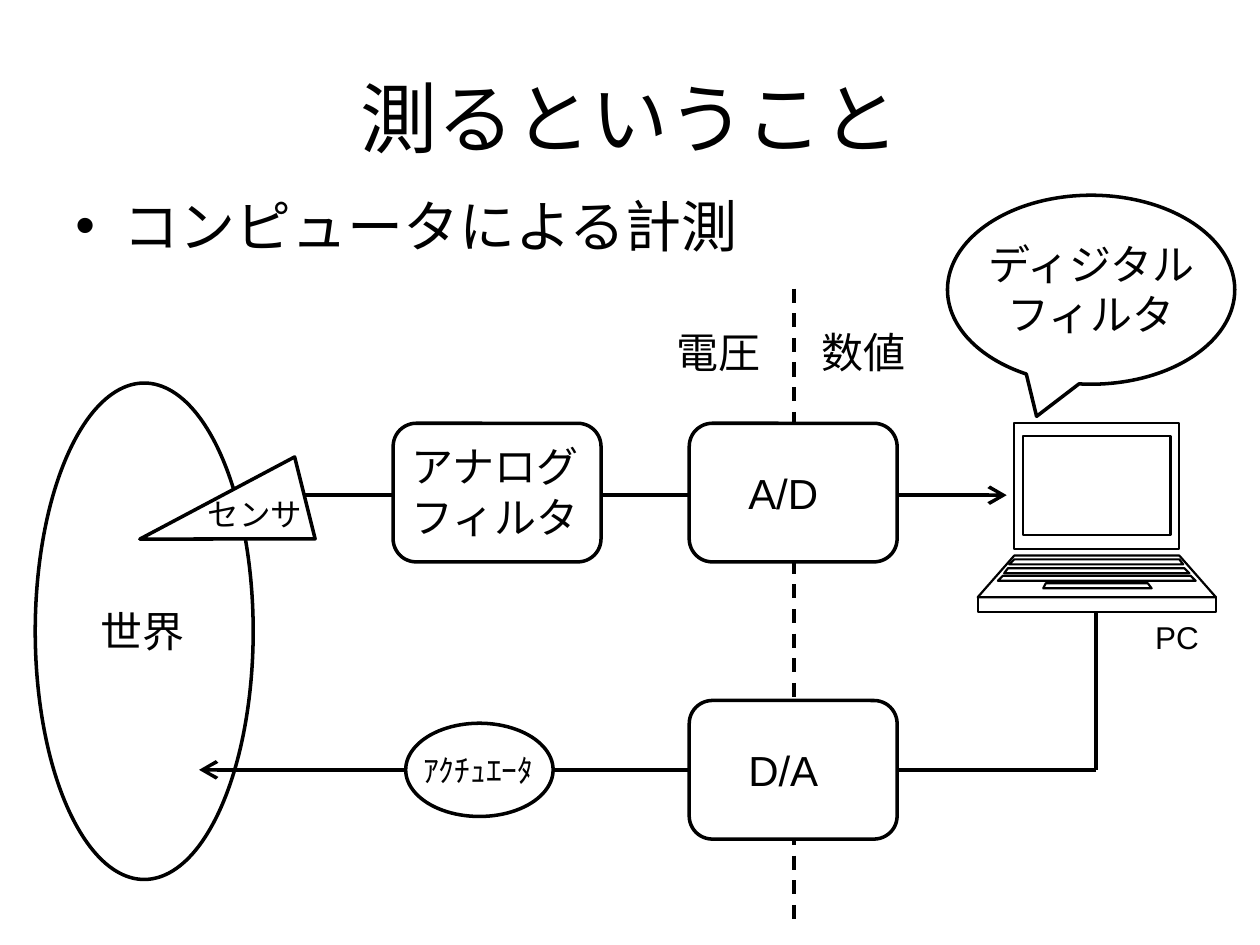
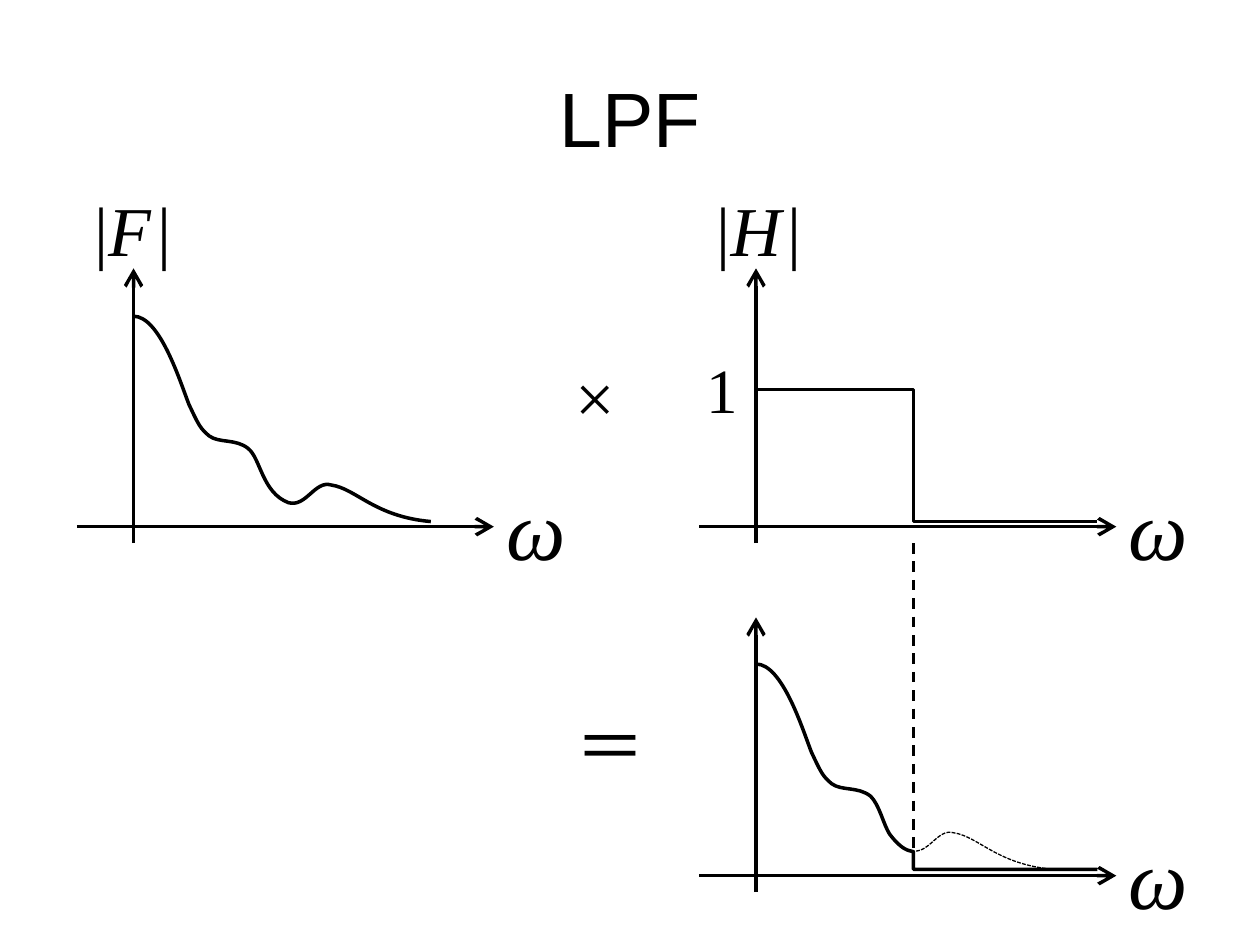
from lxml import etree
from pptx import Presentation
from pptx.dml.color import RGBColor
from pptx.enum.dml import MSO_LINE as Dash
from pptx.enum.shapes import MSO_CONNECTOR as Link, MSO_SHAPE as Shape
from pptx.enum.text import MSO_ANCHOR as Anchor, MSO_AUTO_SIZE as AutoSize, PP_ALIGN as Align
from pptx.oxml.ns import qn
from pptx.util import Pt

PX = 9144
INK = RGBColor(0, 0, 0)
PAPER = RGBColor(255, 255, 255)
SANS, KANA, SERIF = "Arial", "Karla", "Times New Roman"


def write(holder, text, size=24, font=SANS, italic=False, align=Align.LEFT,
          wrap=False, anchor=Anchor.TOP, fit=AutoSize.SHAPE_TO_FIT_TEXT):
    frame = holder.text_frame
    frame.word_wrap, frame.vertical_anchor, frame.auto_size = wrap, anchor, fit
    lines = text.split("\n") if isinstance(text, str) else [text]
    for index, line in enumerate(lines):
        paragraph = frame.add_paragraph() if index else frame.paragraphs[0]
        paragraph.alignment = align
        runs = [(line, size, italic)] if isinstance(line, str) else line
        for words, points, slanted in runs:
            run = paragraph.add_run()
            run.text = words
            run.font.size, run.font.name = Pt(points), font
            run.font.italic = slanted
            run.font.color.rgb = INK
    return frame.paragraphs[0]


def outline(shape, width=2, dash=None, arrow=False, filled=False):
    shape.line.color.rgb = INK
    shape.line.width = Pt(width)
    if dash:
        shape.line.dash_style = dash
    if filled:
        shape.fill.solid()
        shape.fill.fore_color.rgb = PAPER
    properties = shape.element.spPr
    if arrow:
        etree.SubElement(properties.find(qn("a:ln")), qn("a:tailEnd"),
                         type="arrow", w="lg", len="lg")
    etree.SubElement(properties, qn("a:effectLst"))
    return shape


deck = Presentation()
deck.slide_width, deck.slide_height = 1000 * PX, 750 * PX
slides = []
for heading, font in [("測るということ", KANA), ("LPF", SANS)]:
    slide = deck.slides.add_slide(deck.slide_layouts[5])
    title = slide.shapes.title
    title.left, title.top, title.width, title.height = [n * PX for n in (50, 30, 900, 125)]
    write(title, heading, size=44, font=font, align=Align.CENTER, wrap=True,
          anchor=Anchor.MIDDLE, fit=AutoSize.NONE)
    slides.append(slide.shapes)
measuring, lowpass = slides

topic = measuring.add_textbox(*[n * PX for n in (50, 147, 900, 495)])
bullet = write(topic, "コンピュータによる計測", size=32, wrap=True, fit=AutoSize.NONE)
bullet.space_before = Pt(6)
indent = bullet._p.get_or_add_pPr()
indent.set("marL", str(38 * PX))
indent.set("indent", str(-38 * PX))
etree.SubElement(indent, qn("a:buFont"), typeface=SANS)
etree.SubElement(indent, qn("a:buChar"), char="•")

world = measuring.add_shape(Shape.OVAL, *[n * PX for n in (28, 304, 173, 394)])
outline(world, filled=True)

signal_lines = [
    ((630, 229, 630, 732), Dash.DASH, False),
    ((240, 393, 799, 393), None, True),
    ((870, 486, 870, 611), None, False),
    ((870, 611, 158, 611), None, True),
]
for ends, dash, arrow in signal_lines:
    line = measuring.add_connector(Link.STRAIGHT, *[n * PX for n in ends])
    outline(line, dash=dash, arrow=arrow)

stages = [
    (Shape.ISOSCELES_TRIANGLE, (143, 344, 67, 135)),
    (Shape.ROUNDED_RECTANGLE, (312, 336, 165, 110)),
    (Shape.ROUNDED_RECTANGLE, (547, 336, 165, 110)),
    (Shape.ROUNDED_RECTANGLE, (547, 556, 165, 110)),
    (Shape.OVAL, (322, 574, 117, 74)),
    (Shape.OVAL_CALLOUT, (752, 155, 228, 150)),
]
for kind, box in stages:
    stage = outline(measuring.add_shape(kind, *[n * PX for n in box]), filled=True)
    if kind == Shape.ISOSCELES_TRIANGLE:
        stage.rotation = 256
    if kind == Shape.OVAL_CALLOUT:
        stage.adjustments[0], stage.adjustments[1] = -0.19, 0.67

laptop_panels = [
    (805, 936, 336, 805, 936, 436),
    (805, 936, 441, 776, 965, 474),
    (776, 965, 474, 776, 965, 486),
    (812, 929, 346, 812, 929, 425),
    (805, 936, 444, 801, 939, 448),
    (830, 911, 463, 828, 914, 467),
    (800, 940, 451, 797, 944, 455),
    (796, 945, 457, 792, 949, 461),
]
laptop = measuring.build_freeform(805, 336, scale=PX)
for left, right, top, low_left, low_right, bottom in laptop_panels:
    if top > 336:
        laptop.move_to(left, top)
    laptop.add_line_segments([(right, top), (low_right, bottom), (low_left, bottom), (left, top)])
outline(laptop.convert_to_shape(), width=1.25, filled=True)

labels = [
    ("電圧", (527, 254, 88, 47), 24, KANA, Align.LEFT),
    ("数値", (642, 254, 88, 47), 24, KANA, Align.LEFT),
    ("センサ", (155, 388, 96, 40), 18, KANA, Align.LEFT),
    ("世界", (70, 476, 88, 50), 24, KANA, Align.LEFT),
    ("PC", (907, 486, 58, 40), 18, SANS, Align.LEFT),
    ("A/D", (584, 366, 92, 50), 24, SANS, Align.LEFT),
    ("D/A", (584, 586, 92, 50), 24, SANS, Align.LEFT),
    ("アナログ\nフィルタ", (317, 345, 155, 91), 24, SANS, Align.LEFT),
    ("ディジタル\nフィルタ", (772, 184, 188, 91), 24, SANS, Align.CENTER),
    ("ｱｸﾁｭｴｰﾀ", (326, 591, 109, 40), 18, KANA, Align.LEFT),
]
for text, box, size, font, align in labels:
    label = measuring.add_textbox(*[n * PX for n in box])
    write(label, text, size=size, font=font, align=align)

OUTPUT_X, OUTPUT_Y = 494, 276
for dx, dy in [(0, 0), (OUTPUT_X, 0), (OUTPUT_X, OUTPUT_Y + 1)]:
    for x1, y1, x2, y2 in [(61, 418, 392, 418), (106, 431, 106, 213)]:
        axis = lowpass.add_connector(Link.STRAIGHT, (x1 + dx) * PX, (y1 + dy) * PX,
                                     (x2 + dx) * PX, (y2 + dy) * PX)
        outline(axis, arrow=True)
    omega = lowpass.add_textbox((392 + dx) * PX, (373 + dy) * PX, 47 * PX, 91 * PX)
    write(omega, "ω", size=48, font=SERIF, italic=True, wrap=True)

cutoff = lowpass.add_connector(Link.STRAIGHT, *[n * PX for n in (725, 431, 725, 674)])
outline(cutoff, width=1.5, dash=Dash.DASH)

response = lowpass.add_connector(Link.ELBOW, *[n * PX for n in (600, 309, 871, 414)])
outline(response)
bend = response.element.spPr.find(qn("a:prstGeom")).get_or_add_avLst()
etree.SubElement(bend, qn("a:gd"), name="adj1", fmla="val 46100")

slope = [(106, 251), (127, 251), (143, 303), (150, 321), (158, 338), (159, 340),
         (166, 346), (174, 352), (187, 348), (197, 356)]
dip = [(207, 364), (208, 391), (229, 399)]
hump = [(243, 403), (250, 381), (263, 385), (283, 388), (297, 410), (342, 414)]
cut = [(204, 363), (207, 378), (212, 386), (222, 399), (227, 399), (231, 400)]
floor = [(231, 405), (231, 409), (231, 414), (377, 414)]
spectra = [
    (slope + dip + hump, 0, 0, 2, None),
    (slope + cut + floor, OUTPUT_X, OUTPUT_Y, 2, None),
    (dip[-1:] + hump, OUTPUT_X, OUTPUT_Y, 0.75, Dash.SQUARE_DOT),
]
for knots, dx, dy, width, dash in spectra:
    start, *controls = [(x + dx, y + dy) for x, y in knots]
    builder = lowpass.build_freeform(*start, scale=PX)
    builder.add_line_segments(controls, close=False)
    spectrum = outline(builder.convert_to_shape(), width=width, dash=dash)
    spectrum.fill.background()
    segments = list(spectrum.element.iter(qn("a:lnTo")))
    for first in range(0, len(segments) - 2, 3):
        curve = etree.Element(qn("a:cubicBezTo"))
        segments[first].addprevious(curve)
        for segment in segments[first:first + 3]:
            curve.append(segment[0])
            segment.getparent().remove(segment)

symbols = [
    ("×", (447, 276, 72, 77), 40),
    ("＝", (447, 553, 72, 77), 40),
    ("1", (551, 273, 47, 71), 36),
]
for letter, left in [("F", 65), ("H", 559)]:
    magnitude = [("|", 40, False), (letter, 40, True), (" ", 14, True), ("|", 40, False)]
    symbols.append((magnitude, (left, 143, 94, 77), 40))
for text, box, size in symbols:
    symbol = lowpass.add_textbox(*[n * PX for n in box])
    write(symbol, text, size=size, font=SERIF, wrap=True)

deck.save("out.pptx")
